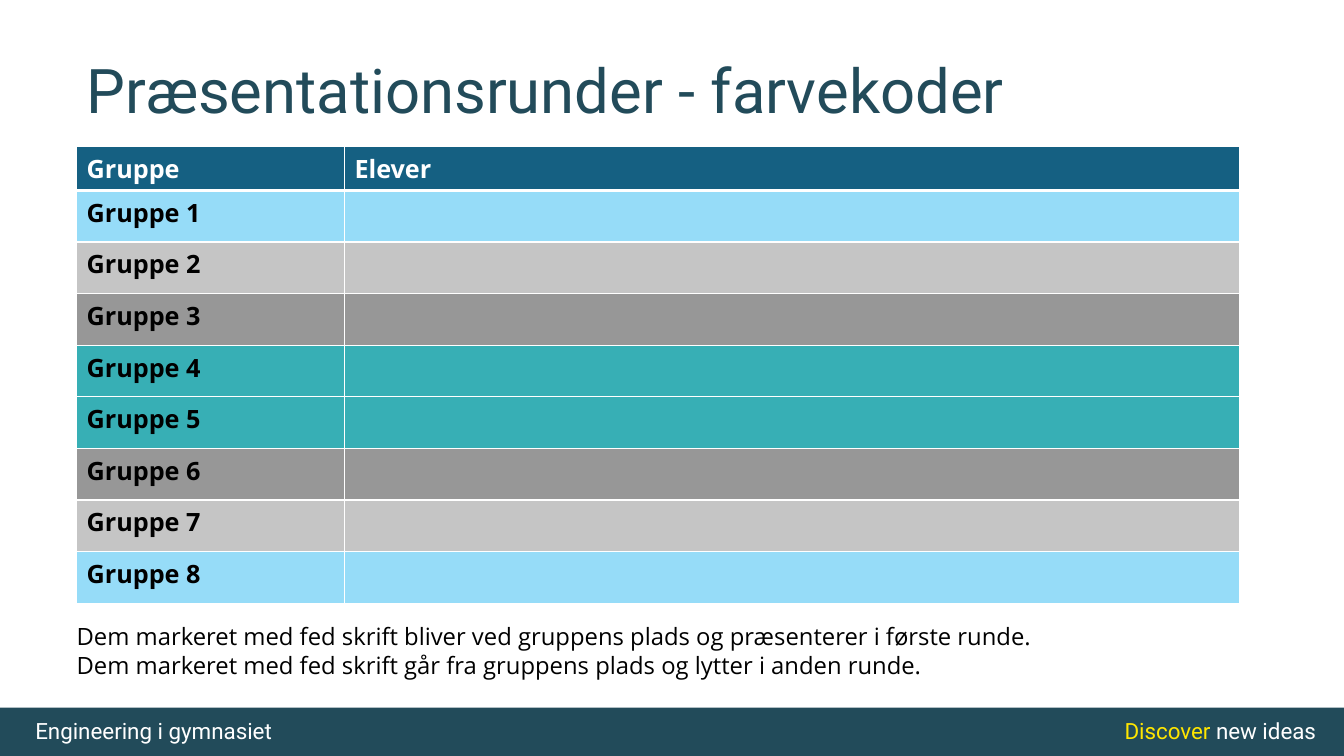
import pptx
import pptx.util
import pptx.dml.color
import pptx.enum.shapes
import pptx.enum.text
import pptx.oxml
import pptx.oxml.ns
from pptx.util import Cm


def rgb(color):
    return pptx.dml.color.RGBColor.from_string(color)


def write(tf, text, size=18, font="Open Sans", color="000000", bold=False, new=False, spacing=None):
    p = tf.add_paragraph() if new else tf.paragraphs[-1]
    if spacing:
        p.line_spacing = spacing
    r = p.add_run()
    r.text = text
    r.font.size = pptx.util.Pt(size)
    r.font.name = font
    r.font.bold = bold
    r.font.color.rgb = rgb(color)


prs = pptx.Presentation()
prs.slide_width = Cm(33.87)
prs.slide_height = Cm(19.05)
s = prs.slides.add_slide(prs.slide_layouts[6])

sp = s.shapes.add_shape(pptx.enum.shapes.MSO_SHAPE.RECTANGLE, 0, Cm(17.83), Cm(33.87), Cm(1.22))
sp.shadow.inherit = False
sp.fill.solid()
sp.fill.fore_color.rgb = rgb("224B5A")
sp.line.fill.background()

footers = [
    (0.64, [("Engineering i gymnasiet", "FFFFFF")]),
    (28.09, [("Discover", "FFE600"), (" new ideas", "FFFFFF")]),
]
for left, parts in footers:
    tf = s.shapes.add_textbox(Cm(left), Cm(17.95), Cm(9.2), Cm(0.94)).text_frame
    tf.word_wrap = True
    for text, color in parts:
        write(tf, text, size=16, font="Roboto", color=color)

tf = s.shapes.add_textbox(Cm(1.93), Cm(0.53), Cm(29.21), Cm(3.68)).text_frame
tf.word_wrap = True
tf.vertical_anchor = pptx.enum.text.MSO_ANCHOR.MIDDLE
write(tf, "Præsentationsrunder - farvekoder", size=44, font="Roboto", color="224B5A", spacing=0.9)

half = ["96DCF8", "C5C5C5", "979797", "37AFB5"]
fills = ["156082"] + half + half[::-1]
labels = ["Gruppe"] + [f"Gruppe {n}" for n in range(1, 9)]
table = s.shapes.add_table(len(fills), 2, Cm(1.93), Cm(3.7), Cm(29.31), Cm(11.47)).table
table.columns[0].width = Cm(6.75)
table.columns[1].width = Cm(22.56)
for i, (label, fill) in enumerate(zip(labels, fills)):
    table.rows[i].height = Cm(1.3 if i else 1.1)
    for j, text in enumerate([label, "" if i else "Elever"]):
        cell = table.cell(i, j)
        if text:
            write(cell.text_frame, text, color="000000" if i else "FFFFFF", bold=True)
        tcPr = cell._tc.get_or_add_tcPr()
        for side in ["L", "R", "T", "B"]:
            thick = (i, side) in [(0, "B"), (1, "T")]
            tcPr.append(pptx.oxml.parse_xml(
                f'<a:ln{side} {pptx.oxml.ns.nsdecls("a")} w="{38100 if thick else 12700}">'
                f'<a:solidFill><a:srgbClr val="FFFFFF"/></a:solidFill></a:ln{side}>'))
        cell.fill.solid()
        cell.fill.fore_color.rgb = rgb(fill)

tf = s.shapes.add_textbox(Cm(1.93), Cm(15.54), Cm(29.24), Cm(2.49)).text_frame
tf.word_wrap = True
tf.margin_left = tf.margin_right = 0
write(tf, "Dem markeret med fed skrift bliver ved gruppens plads og præsenterer i første runde.", size=17)
write(tf, "Dem markeret med fed skrift går fra gruppens plads og lytter i anden runde.", size=17, new=True)

prs.save("out.pptx")
